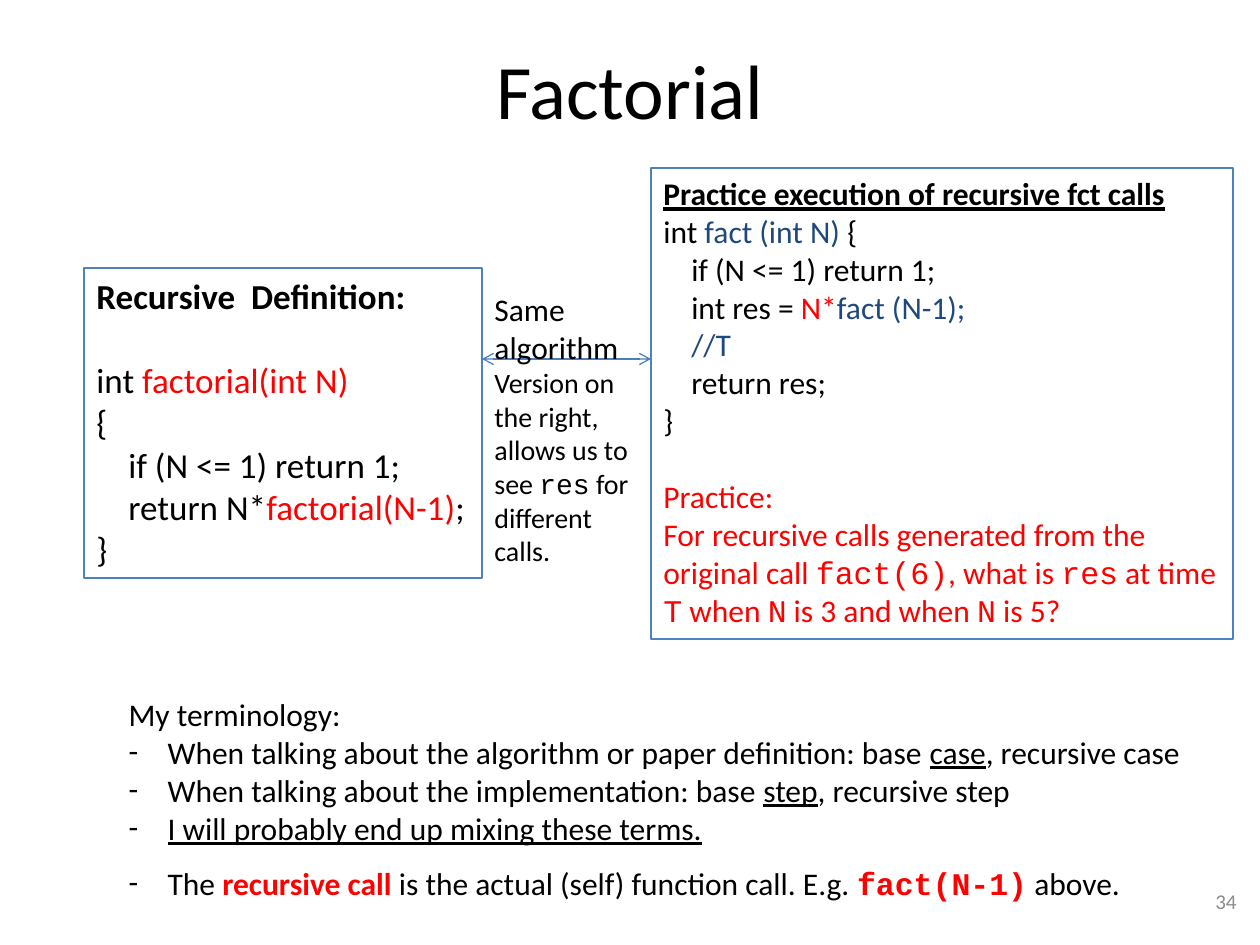
from dataclasses import dataclass

from lxml.etree import SubElement
from pptx import Presentation
from pptx.dml.color import RGBColor
from pptx.enum.shapes import MSO_CONNECTOR, MSO_SHAPE
from pptx.enum.text import MSO_ANCHOR, MSO_AUTO_SIZE, PP_ALIGN
from pptx.oxml.ns import qn
from pptx.util import Inches, Pt

EMU_PER_PX = Inches(1) / 126


def px(length):
    return round(length * EMU_PER_PX)


@dataclass(frozen=True)
class Theme:
    text: str = "000000"
    red: str = "FF0000"
    navy: str = "1F497D"
    grey: str = "8C8C8C"
    border: str = "4F81BD"
    arrow: str = "4B7EBC"
    font: str = "Calibri"
    mono: str = "Courier New"
    title: int = 44
    large: int = 20
    body: int = 18
    note: int = 16
    small: int = 12
    line: float = 0.75


@dataclass(frozen=True)
class Para:
    """Runs are plain strings or (text, marks) pairs.

    Marks: r red, n navy, g grey, b bold, u underlined, m monospaced.
    """
    runs: tuple
    size: int
    indent: int = 0
    before: float = 0
    dash: bool = False
    align: PP_ALIGN = PP_ALIGN.LEFT


class SlideBuilder:
    def __init__(self, slide, theme):
        self.slide = slide
        self.theme = theme

    def style_run(self, run, marks, size):
        theme, font = self.theme, run.font
        colours = {"r": theme.red, "n": theme.navy, "g": theme.grey}
        colour = next((colours[m] for m in marks if m in colours), theme.text)
        font.name = theme.mono if "m" in marks else theme.font
        font.size = Pt(size)
        font.bold = "b" in marks
        font.underline = "u" in marks
        font.color.rgb = RGBColor.from_string(colour)

    def fill_text(self, frame, paras, anchor=MSO_ANCHOR.TOP, wrap=True):
        frame.word_wrap = wrap
        frame.auto_size = MSO_AUTO_SIZE.NONE
        frame.vertical_anchor = anchor
        for number, para in enumerate(paras):
            paragraph = frame.add_paragraph() if number else frame.paragraphs[0]
            paragraph.alignment = para.align
            paragraph.space_before = Pt(para.before)
            for item in para.runs:
                text, marks = (item, "") if isinstance(item, str) else item
                run = paragraph.add_run()
                run.text = text
                self.style_run(run, marks, para.size)
            # Indents and bullets
            props = paragraph._p.get_or_add_pPr()
            props.set("marL", str(px(para.indent)))
            props.set("indent", str(-px(para.indent) if para.dash else 0))
            if para.dash:
                SubElement(props, qn("a:buFont"), typeface=self.theme.font)
                SubElement(props, qn("a:buChar"), char="-")
            else:
                SubElement(props, qn("a:buNone"))

    def placeholder(self, index, box, paras, anchor=MSO_ANCHOR.TOP):
        holder = self.slide.placeholders[index]
        holder.left, holder.top, holder.width, holder.height = map(px, box)
        self.fill_text(holder.text_frame, paras, anchor)

    def text(self, box, paras, anchor=MSO_ANCHOR.TOP):
        label = self.slide.shapes.add_textbox(*map(px, box))
        self.fill_text(label.text_frame, paras, anchor)

    def panel(self, box, paras, wrap=True):
        panel = self.slide.shapes.add_shape(MSO_SHAPE.RECTANGLE, *map(px, box))
        panel.shadow.inherit = False
        panel.fill.background()
        panel.line.color.rgb = RGBColor.from_string(self.theme.border)
        panel.line.width = Pt(self.theme.line)
        self.fill_text(panel.text_frame, paras, wrap=wrap)

    def double_arrow(self, *ends):
        arrow = self.slide.shapes.add_connector(MSO_CONNECTOR.STRAIGHT, *map(px, ends))
        arrow.line.color.rgb = RGBColor.from_string(self.theme.arrow)
        arrow.line.width = Pt(self.theme.line)
        outline = arrow.line._get_or_add_ln()
        for end in ("a:headEnd", "a:tailEnd"):
            SubElement(outline, qn(end), type="arrow")
        SubElement(arrow._element.spPr, qn("a:effectLst"))


def main():
    theme = Theme()
    deck = Presentation()
    deck.slide_width, deck.slide_height = px(1260), px(945)
    builder = SlideBuilder(deck.slides.add_slide(deck.slide_layouts[1]), theme)

    # Title and slide number
    builder.placeholder(
        0, (63, 10, 1134, 158),
        [Para(("Factorial",), theme.title, align=PP_ALIGN.CENTER)], MSO_ANCHOR.MIDDLE)
    builder.text(
        (955, 876, 294, 50),
        [Para((("34", "g"),), theme.small, align=PP_ALIGN.RIGHT)], MSO_ANCHOR.MIDDLE)

    # Recursive definition
    left, right, arrow_y = 482, 651, 359
    size, step = theme.large, 32
    builder.panel((84, 268, left - 84, 310), [
        Para((("Recursive  Definition:", "b"),), size),
        Para(("int ", ("factorial(int N)", "r")), size, before=24.4),
        Para(("{",), size),
        Para(("if (N <= 1) return 1;",), size, step),
        Para(("return N*", ("factorial(N-1)", "r"), ";"), size, step),
        Para(("}",), size),
    ], wrap=False)

    # Practice version
    size, step = theme.body, 28
    builder.panel((right, 168, 582, 471), [
        Para((("Practice execution of recursive fct calls", "bu"),), size),
        Para(("int", (" fact (int N) ", "n"), "{"), size),
        Para(("if (N <= 1) return 1;",), size, step),
        Para(("int res = ", ("N*", "r"), ("fact (N-1);", "n")), size, step),
        Para((("//T", "n"),), size, step),
        Para(("return res;",), size, step),
        Para(("}",), size),
        Para((("Practice:", "r"),), size, before=22),
        Para((("For recursive calls generated from the original call ", "r"),
              ("fact(6)", "rm"), (", what is ", "r"), ("res", "rm"),
              (" at time ", "r"), ("T", "rm"), (" when ", "r"), ("N", "rm"),
              (" is 3 and when ", "r"), ("N", "rm"), (" is 5?", "r")), size),
    ])

    # Link between the two versions
    builder.double_arrow(left, arrow_y, right, arrow_y)
    builder.text((left, 284, right - left, 292), [
        Para(("Same algorithm",), theme.body),
        Para(("Version on the right, allows us to see ", ("res", "m"),
              " for different calls."), theme.note),
    ])

    # Terminology
    terms = [
        ("When talking about the algorithm or paper definition: base ",
         ("case", "u"), ", recursive case"),
        ("When talking about the implementation: base ", ("step", "u"), ", recursive step"),
        (("I will probably end up mixing these terms.", "u"),),
    ]
    call = ("The ", ("recursive call", "rb"), " is the actual (self) function call. E.g. ",
            ("fact(N-1)", "rbm"), " above.")
    builder.placeholder(1, (116, 689, 1103, 221), [
        Para(("My terminology:",), size),
        *[Para(term, size, 39, dash=True) for term in terms],
        Para(call, size, 39, before=9.8, dash=True),
    ])

    deck.save("out.pptx")


if __name__ == "__main__":
    main()
